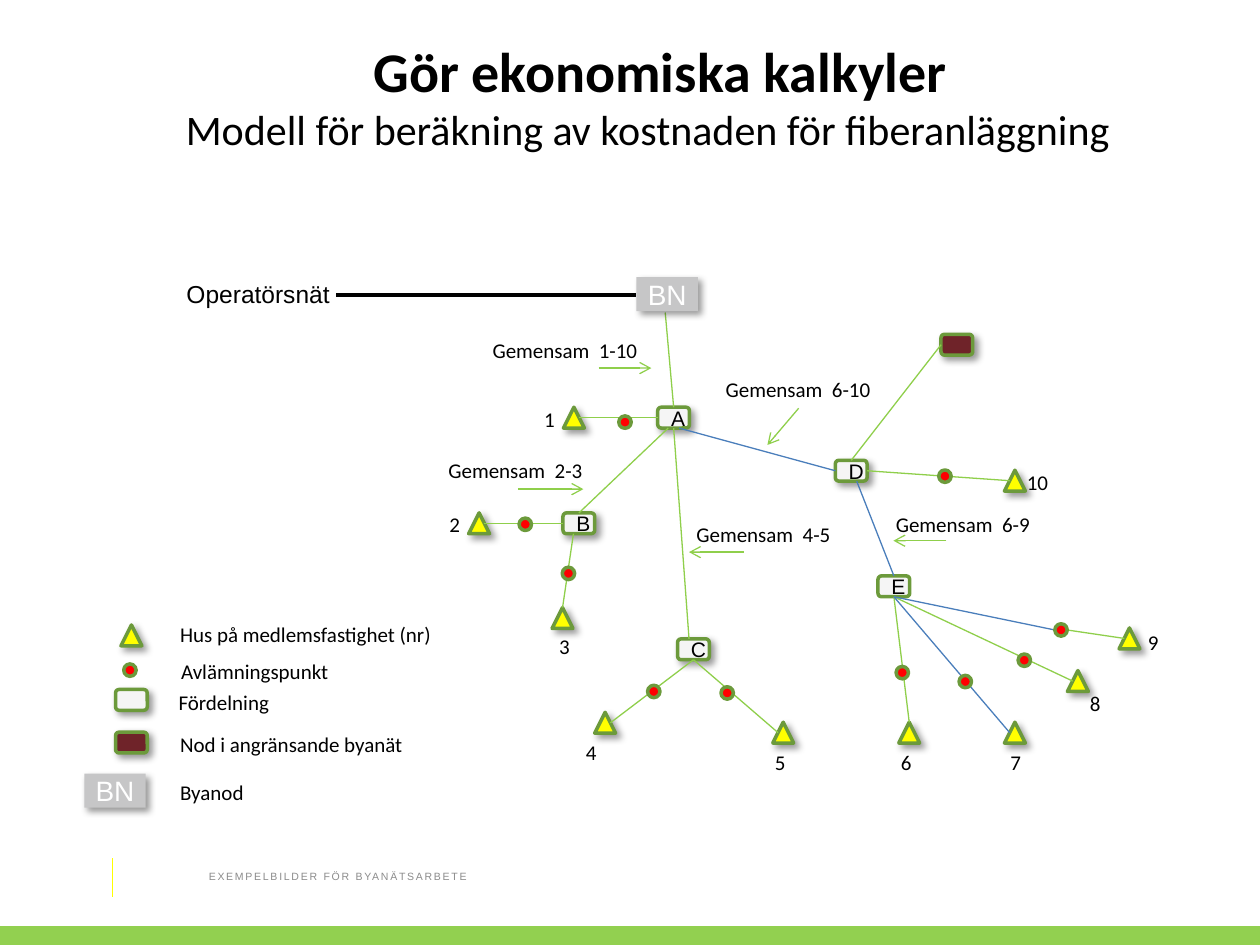
from lxml import etree
from pptx import Presentation
from pptx.dml.color import RGBColor
from pptx.enum.shapes import MSO_CONNECTOR, MSO_SHAPE
from pptx.enum.text import MSO_ANCHOR, MSO_AUTO_SIZE, PP_ALIGN
from pptx.oxml.ns import qn
from pptx.util import Cm, Pt

STRAIGHT = MSO_CONNECTOR.STRAIGHT
RECT, ROUNDED = MSO_SHAPE.RECTANGLE, MSO_SHAPE.ROUNDED_RECTANGLE
TRIANGLE, OVAL = MSO_SHAPE.ISOSCELES_TRIANGLE, MSO_SHAPE.OVAL
CENTER, LEFT = PP_ALIGN.CENTER, PP_ALIGN.LEFT
TOP, MIDDLE = MSO_ANCHOR.TOP, MSO_ANCHOR.MIDDLE
GROW, FIXED = MSO_AUTO_SIZE.SHAPE_TO_FIT_TEXT, MSO_AUTO_SIZE.NONE

BLACK, WHITE, GREY = "000000", "FFFFFF", "C6C6C7"
GREEN, BLUE, BORDER = "8FCF4B", "4A7EBB", "6C9A3B"
PALE, WINE = "F5F5F5", "6F2329"
HUB_W, HUB_H, HOUSE, DOT = 0.64, 0.42, 0.42, 0.25
TITLE_ONLY = 5

# Centres in cm
HUBS = {"A": (13.58, 8.42), "B": (11.67, 10.55), "C": (13.98, 13.09),
        "D": (17.16, 9.49), "E": (18.02, 11.82)}
NEIGHBOUR = (19.29, 6.95)
VILLAGE_NODE = (13.45, 5.93)

# House number: centre, top left of its label
HOUSES = {
    1: ((11.57, 8.42), (10.72, 8.08)), 2: ((9.66, 10.55), (8.81, 10.19)),
    3: ((11.34, 12.46), (11.02, 12.65)), 4: ((12.2, 14.57), (11.56, 14.78)),
    5: ((15.79, 14.77), (15.37, 14.99)), 6: ((18.33, 14.77), (17.91, 14.99)),
    7: ((20.46, 14.77), (20.12, 14.99)), 8: ((21.73, 13.73), (21.72, 13.79)),
    9: ((22.77, 12.87), (22.89, 12.57)), 10: ((20.46, 9.69), (20.45, 9.35)),
}
DROP_POINTS = {1: (12.6, 8.51), 2: (10.59, 10.57), 3: (11.46, 11.56),
               4: (13.18, 13.94), 5: (14.66, 13.97), 6: (18.19, 13.56),
               7: (19.46, 13.74), 8: (20.65, 13.31), 9: (21.39, 12.7),
               10: (19.05, 9.6)}

# Text, left, top, width, arrow start, arrow end
SHARED = [
    ("Gemensam  1-10", 9.68, 6.68, 3.48, (12.07, 7.42), (13.13, 7.42)),
    ("Gemensam  6-10", 14.38, 7.47, 3.48, (16.1, 8.23), (15.47, 8.97)),
    ("Gemensam  2-3", 8.79, 9.09, 3.25, (10.44, 9.86), (11.76, 9.86)),
    ("Gemensam  4-5", 13.79, 10.39, 3.25, (14.99, 11.13), (13.89, 11.13)),
    ("Gemensam  6-9", 17.81, 10.19, 3.25, (19.08, 10.9), (18.01, 10.9)),
]
LEGEND = [
    ("Hus på medlemsfastighet (nr)", 3.38, 12.4, 5.87),
    ("Avlämningspunkt", 3.4, 13.16, 3.51),
    ("Fördelning", 3.35, 13.77, 2.44),
    ("Nod i angränsande byanät", 3.38, 14.63, 5.51),
    ("Byanod", 3.38, 15.6, 1.8),
]


def color(value):
    return RGBColor.from_string(value)


def port(center, width, height, x_side, y_side, shift=0):
    """Point on an outline; the sides are -1, 0 or 1."""
    return center[0] + x_side * width / 2 + shift, center[1] + y_side * height / 2


def hub_port(name, x_side, y_side, shift=0):
    return port(HUBS[name], HUB_W, HUB_H, x_side, y_side, shift)


def house_port(number, x_side, y_side):
    return port(HOUSES[number][0], HOUSE / 2, HOUSE, x_side, y_side)


class Diagram:
    def __init__(self, page):
        self.page = page

    def fill_paragraph(self, paragraph, text, size, font="Calibri", hue=BLACK,
                       align=LEFT, bold=False):
        paragraph.add_run().text = text
        paragraph.alignment = align
        style = paragraph.font
        style.name, style.size, style.bold = font, Pt(size), bold
        style.color.rgb = color(hue)

    def title(self, main_line, sub_line):
        box = self.page.shapes.title
        box.left, box.top, box.width, box.height = Cm(2.54), Cm(0.61), Cm(21.54), Cm(3.15)
        frame = box.text_frame
        frame.auto_size, frame.vertical_anchor, frame.word_wrap = FIXED, TOP, True
        self.fill_paragraph(frame.paragraphs[0], main_line, 32, align=CENTER, bold=True)
        second = frame.add_paragraph()
        second._p.get_or_add_pPr().set("marR", str(Cm(0.5)))
        self.fill_paragraph(second, sub_line, 24, align=CENTER)

    def label(self, text, left, top, width, height=0.76, size=12, **style):
        box = self.page.shapes.add_textbox(Cm(left), Cm(top), Cm(width), Cm(height))
        frame = box.text_frame
        frame.word_wrap, frame.auto_size = False, GROW
        self.fill_paragraph(frame.paragraphs[0], text, size, **style)
        return box

    def shape(self, kind, center, width, height, fill, border=None, shadow=True):
        shape = self.page.shapes.add_shape(
            kind, Cm(center[0] - width / 2), Cm(center[1] - height / 2),
            Cm(width), Cm(height))
        shape.fill.solid()
        shape.fill.fore_color.rgb = color(fill)
        if border:
            shape.line.color.rgb = color(border)
            shape.line.width = Pt(2)
        else:
            shape.line.fill.background()
        shape.shadow.inherit = False
        if shadow:
            effects = shape._element.spPr.find(qn("a:effectLst"))
            outer = etree.SubElement(effects, qn("a:outerShdw"), blurRad=str(Pt(4)),
                                     dist=str(Pt(3)), dir="2700000", rotWithShape="0")
            black = etree.SubElement(outer, qn("a:srgbClr"), val=BLACK)
            etree.SubElement(black, qn("a:alpha"), val="40000")
        return shape

    def hub(self, center, name="", fill=PALE, shadow=True):
        shape = self.shape(ROUNDED, center, HUB_W, HUB_H, fill, BORDER, shadow)
        if name:
            frame = shape.text_frame
            frame.vertical_anchor = MIDDLE
            self.fill_paragraph(frame.paragraphs[0], name, 12, "Arial", align=CENTER)

    def house(self, center):
        self.shape(TRIANGLE, center, HOUSE, HOUSE, "FFFF00", BORDER)

    def drop_point(self, center):
        self.shape(OVAL, center, DOT, DOT, "FF0000", BORDER, shadow=False)

    def village_node(self, center):
        frame = self.shape(RECT, center, 1.24, 0.69, GREY).text_frame
        frame.word_wrap, frame.vertical_anchor = False, MIDDLE
        self.fill_paragraph(frame.paragraphs[0], "BN", 16, "Arial", WHITE, CENTER)

    def line(self, start, end, hue=GREEN, width=0.75, arrow=False):
        line = self.page.shapes.add_connector(STRAIGHT, *map(Cm, start + end))
        line.line.color.rgb = color(hue)
        line.line.width = Pt(width)
        properties = line._element.spPr
        if arrow:
            etree.SubElement(properties.find(qn("a:ln")), qn("a:tailEnd"), type="arrow")
        etree.SubElement(properties, qn("a:effectLst"))


def main():
    deck = Presentation()
    deck.slide_width, deck.slide_height = Cm(25.4), Cm(19.05)
    page = deck.slides.add_slide(deck.slide_layouts[TITLE_ONLY])
    diagram = Diagram(page)

    # Title and footer
    diagram.title("Gör ekonomiska kalkyler",
                  "Modell för beräkning av kostnaden för fiberanläggning")
    diagram.line((2.26, 17.3), (2.26, 18.08), "FFFF00", 0.5)
    diagram.shape(RECT, (12.7, 18.86), 25.4, 0.38, "92D050", shadow=False)
    footer = diagram.label("EXEMPELBILDER FÖR BYANÄTSARBETE", 3.96, 17.15, 8.05, 1.02,
                           6, font="Arial", hue="8C8C8C").text_frame
    footer.auto_size, footer.word_wrap, footer.vertical_anchor = FIXED, True, MIDDLE
    footer.paragraphs[0].runs[0]._r.get_or_add_rPr().set("spc", "100")

    # Hubs and houses
    for name, center in HUBS.items():
        diagram.hub(center, name, shadow=name != "E")
    diagram.hub(NEIGHBOUR, fill=WINE)
    for number, (center, corner) in HOUSES.items():
        diagram.house(center)
        diagram.label(str(number), *corner, 0.99 if number > 9 else 0.76)

    # Cables
    e_bottom, c_bottom = hub_port("E", 0, 1), hub_port("C", 0, 1)
    green_cables = [
        ((13.41, 6.3), hub_port("A", 0, -1)),
        (hub_port("A", 0, 1, -0.11), hub_port("B", 0, -1)),
        (hub_port("A", 0, 1), hub_port("C", 0, -1, -0.09)),
        (port(NEIGHBOUR, HUB_W, HUB_H, -1, 0), hub_port("D", 0, -1)),
        (house_port(1, 1, 0), hub_port("A", -1, 0)),
        (house_port(2, 1, 0), hub_port("B", -1, 0)),
        (hub_port("B", 0, 1, -0.11), house_port(3, 0, -1)),
        (c_bottom, house_port(4, 1, 0)),
        (c_bottom, house_port(5, -1, 0)),
        (e_bottom, house_port(6, 0, -1)),
        (e_bottom, house_port(8, -1, 0)),
        (port(DROP_POINTS[9], DOT, DOT, 1, 0), house_port(9, -1, 0)),
        (hub_port("D", 1, 0), house_port(10, -1, 0)),
    ]
    blue_cables = [
        (hub_port("A", 0, 1, 0.11), hub_port("D", -1, 0)),
        (hub_port("D", 0, 1, 0.11), hub_port("E", 0, -1)),
        (e_bottom, house_port(7, -1, 0)),
        (e_bottom, port(DROP_POINTS[9], DOT, DOT, -1, 0)),
    ]
    for hue, cables in ((GREEN, green_cables), (BLUE, blue_cables)):
        for start, end in cables:
            diagram.line(start, end, hue)
    for center in DROP_POINTS.values():
        diagram.drop_point(center)

    # Operator network
    diagram.label("Operatörsnät", 3.51, 5.51, 3.81, 0.86, 14, font="Arial")
    diagram.line((6.78, 5.94), (12.83, 5.94), BLACK, 2.25)
    diagram.village_node(VILLAGE_NODE)

    # Shared stretches
    for text, left, top, width, start, end in SHARED:
        diagram.label(text, left, top, width)
        diagram.line(start, end, arrow=True)

    # Legend
    diagram.house((2.65, 12.81))
    diagram.drop_point((2.62, 13.51))
    diagram.hub((2.65, 14.11))
    diagram.hub((2.65, 14.97), fill=WINE)
    diagram.village_node((2.32, 15.94))
    for entry in LEGEND:
        diagram.label(*entry)

    deck.save("out.pptx")


if __name__ == "__main__":
    main()
